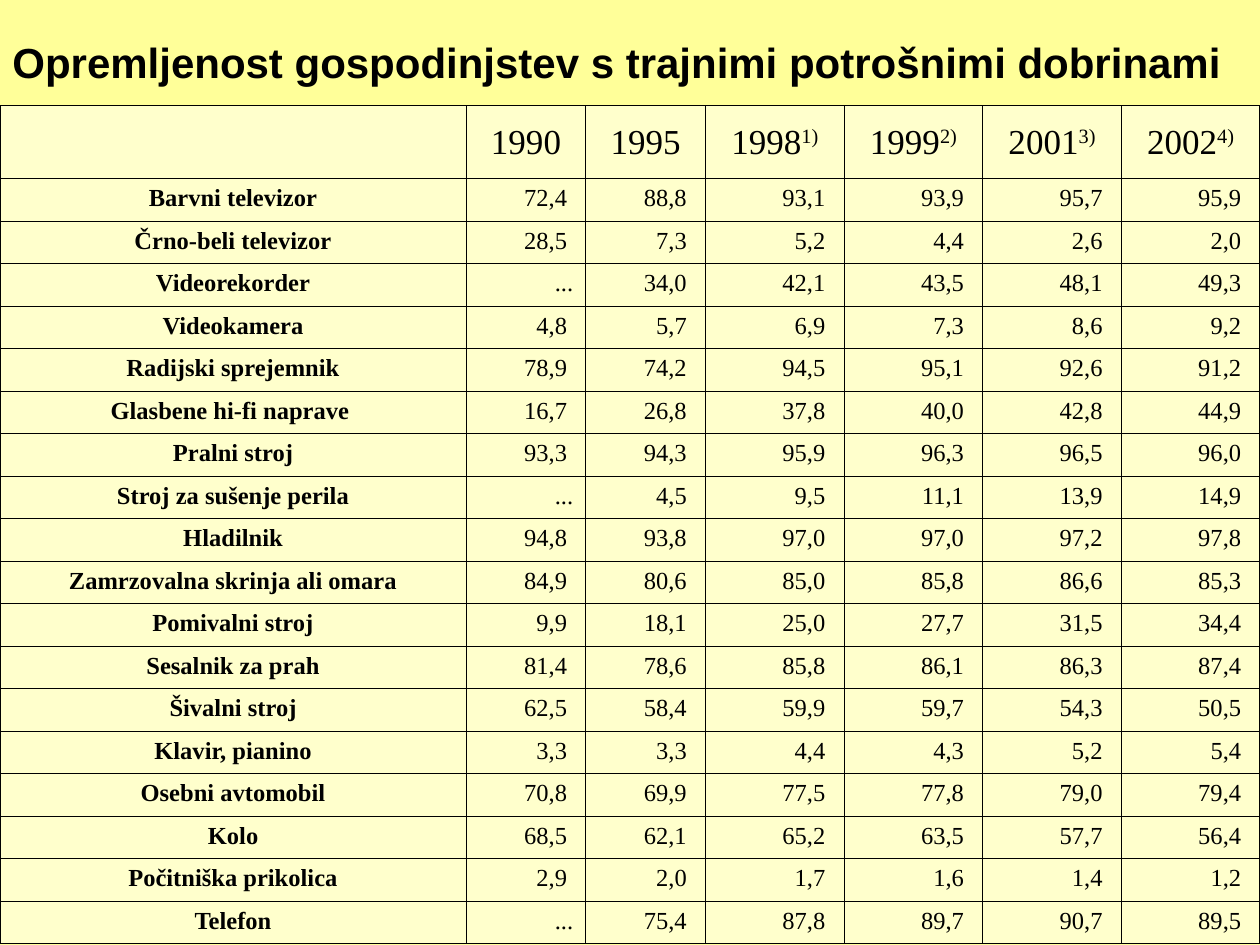
from lxml.etree import SubElement
from pptx import Presentation
from pptx.dml.color import RGBColor
from pptx.enum.text import MSO_ANCHOR, PP_ALIGN
from pptx.oxml.ns import qn
from pptx.util import Pt

BLACK, YELLOW, CREAM = "000000", "FFFF99", "FFFFCC"
TITLE = "Opremljenost gospodinjstev s trajnimi potrošnimi dobrinami"
YEARS = [("1990", ""), ("1995", ""), ("1998", "1)"), ("1999", "2)"), ("2001", "3)"), ("2002", "4)")]
GOODS = [
    ("Barvni televizor", "72,4 88,8 93,1 93,9 95,7 95,9"),
    ("Črno-beli televizor", "28,5 7,3 5,2 4,4 2,6 2,0"),
    ("Videorekorder", "... 34,0 42,1 43,5 48,1 49,3"),
    ("Videokamera", "4,8 5,7 6,9 7,3 8,6 9,2"),
    ("Radijski sprejemnik", "78,9 74,2 94,5 95,1 92,6 91,2"),
    ("Glasbene hi-fi naprave ", "16,7 26,8 37,8 40,0 42,8 44,9"),
    ("Pralni stroj", "93,3 94,3 95,9 96,3 96,5 96,0"),
    ("Stroj za sušenje perila", "... 4,5 9,5 11,1 13,9 14,9"),
    ("Hladilnik", "94,8 93,8 97,0 97,0 97,2 97,8"),
    ("Zamrzovalna skrinja ali omara", "84,9 80,6 85,0 85,8 86,6 85,3"),
    ("Pomivalni stroj", "9,9 18,1 25,0 27,7 31,5 34,4"),
    ("Sesalnik za prah", "81,4 78,6 85,8 86,1 86,3 87,4"),
    ("Šivalni stroj", "62,5 58,4 59,9 59,7 54,3 50,5"),
    ("Klavir, pianino", "3,3 3,3 4,4 4,3 5,2 5,4"),
    ("Osebni avtomobil", "70,8 69,9 77,5 77,8 79,0 79,4"),
    ("Kolo", "68,5 62,1 65,2 63,5 57,7 56,4"),
    ("Počitniška prikolica", "2,9 2,0 1,7 1,6 1,4 1,2"),
    ("Telefon", "... 75,4 87,8 89,7 90,7 89,5"),
]
COLUMN_WIDTHS = [266.4] + [68.4] * 2 + [79.2] * 4
HEADER_HEIGHT, ROW_HEIGHT = 41.6, 24.32


def color(hex_string):
    return RGBColor.from_string(hex_string)


def format_span(span, size, name="Times New Roman", bold=False):
    font = span.font
    font.size, font.name, font.bold = Pt(size), name, bold
    font.color.rgb = color(BLACK)


def add_title(slide):
    box = slide.shapes.add_textbox(Pt(0), Pt(16), Pt(711), Pt(64.8))
    frame = box.text_frame
    frame.word_wrap = True
    frame.vertical_anchor = MSO_ANCHOR.TOP
    frame.margin_top = Pt(5)
    frame.text = TITLE
    format_span(frame.paragraphs[0].runs[0], 24, "Arial", True)


def style_cell(cell):
    """Give the cell thin black borders and a cream fill."""
    properties = cell._tc.get_or_add_tcPr()
    for side in ("a:lnL", "a:lnR", "a:lnT", "a:lnB"):
        line = SubElement(properties, qn(side), w=str(Pt(0.75)))
        fill = SubElement(line, qn("a:solidFill"))
        SubElement(fill, qn("a:srgbClr"), val=BLACK)
    cell.fill.solid()
    cell.fill.fore_color.rgb = color(CREAM)


def write_cell(cell, text, size, align, bold=False):
    para = cell.text_frame.paragraphs[0]
    para.text = text
    para.alignment = align
    format_span(para.runs[0], size, bold=bold)


def write_year(cell, year, note):
    """Write a year with its footnote mark in superscript."""
    write_cell(cell, year, 20, PP_ALIGN.CENTER)
    cell.vertical_anchor = MSO_ANCHOR.MIDDLE
    if note:
        span = cell.text_frame.paragraphs[0].add_run()
        span.text = note
        format_span(span, 20)
        span._r.get_or_add_rPr().set("baseline", "30000")


def add_goods_table(slide):
    height = HEADER_HEIGHT + ROW_HEIGHT * len(GOODS)
    table = slide.shapes.add_table(len(GOODS) + 1, len(COLUMN_WIDTHS), Pt(0), Pt(60.5),
                                   Pt(sum(COLUMN_WIDTHS)), Pt(height)).table
    table.first_row = table.horz_banding = False
    for column, width in zip(table.columns, COLUMN_WIDTHS):
        column.width = Pt(width)
    for index, row in enumerate(table.rows):
        row.height = Pt(ROW_HEIGHT if index else HEADER_HEIGHT)
    for cell in table.iter_cells():
        style_cell(cell)
    for column, (year, note) in enumerate(YEARS, 1):
        write_year(table.cell(0, column), year, note)
    for row, (name, values) in enumerate(GOODS, 1):
        write_cell(table.cell(row, 0), name, 14, PP_ALIGN.CENTER, bold=True)
        for column, value in enumerate(values.split(), 1):
            text = value if value == "..." else value + " "
            write_cell(table.cell(row, column), text, 14, PP_ALIGN.RIGHT)


def main():
    deck = Presentation()
    deck.slide_width, deck.slide_height = Pt(720), Pt(540)
    slide = deck.slides.add_slide(deck.slide_layouts[6])
    slide.background.fill.solid()
    slide.background.fill.fore_color.rgb = color(YELLOW)
    add_title(slide)
    add_goods_table(slide)
    deck.save("out.pptx")


if __name__ == "__main__":
    main()
